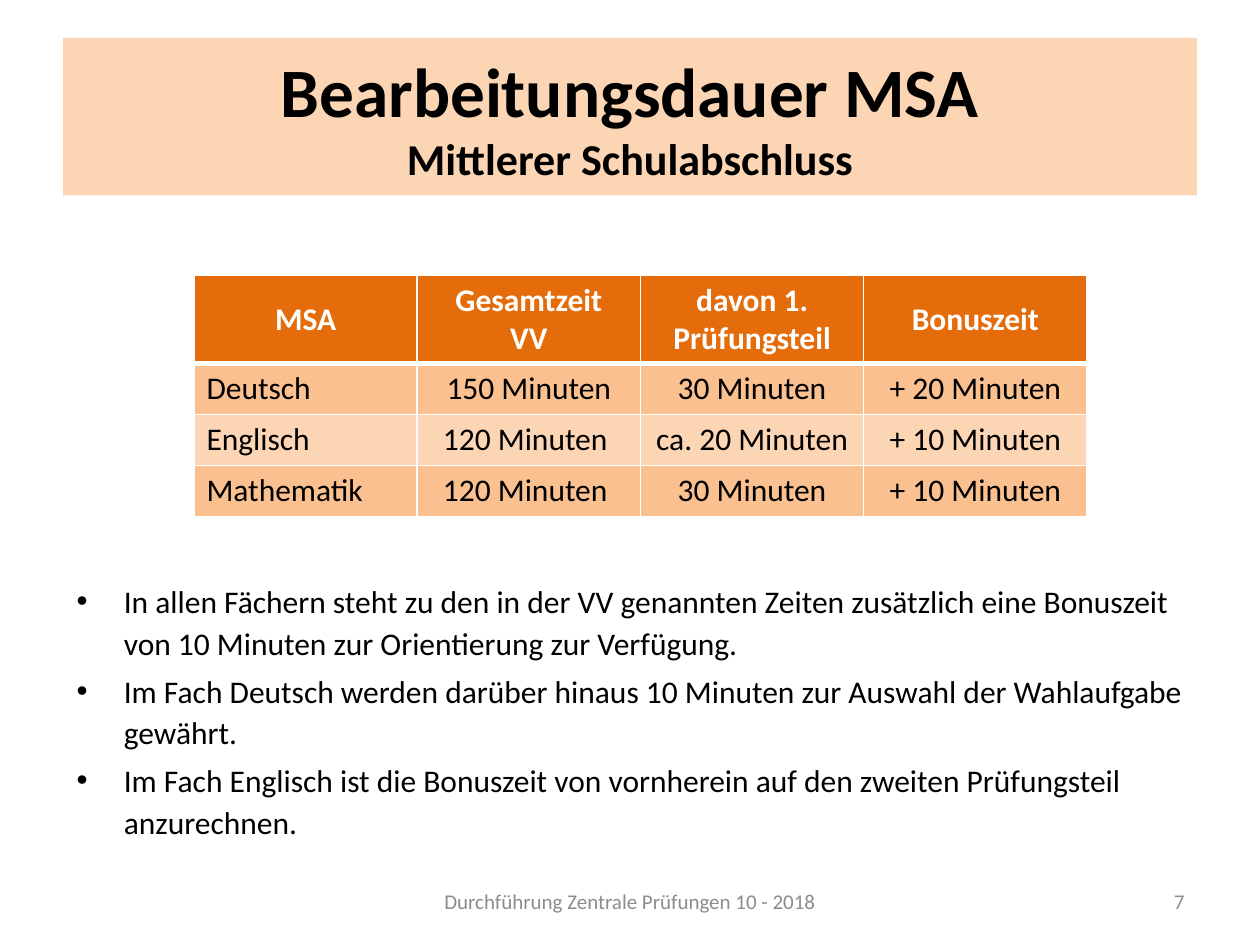
"""Build the slide on working times for the MSA exams."""
from lxml import etree
from pptx import Presentation
from pptx.dml.color import RGBColor
from pptx.enum.text import MSO_ANCHOR as Anchor, MSO_AUTO_SIZE as AutoSize, PP_ALIGN as Align
from pptx.oxml.ns import qn
from pptx.util import Pt

FONT = "Calibri"
COLORS = {"black": "000000", "white": "FFFFFF", "gray": "8C8C8C",
          "header": "E46C0A", "dark": "FAC090", "light": "FCD5B5"}
ROWS = [
    ["MSA", "Gesamtzeit\nVV", "davon 1. Prüfungsteil", "Bonuszeit"],
    ["Deutsch", "150 Minuten", "30 Minuten", "+ 20 Minuten"],
    ["Englisch", "120 Minuten ", "ca. 20 Minuten", "+ 10 Minuten"],
    ["Mathematik", "120 Minuten ", "30 Minuten", "+ 10 Minuten"],
]
NOTES = [
    "In allen Fächern steht zu den in der VV genannten Zeiten zusätzlich eine "
    "Bonuszeit von 10 Minuten zur Orientierung zur Verfügung.",
    "Im Fach Deutsch werden darüber hinaus 10 Minuten zur Auswahl der Wahlaufgabe gewährt.",
    "Im Fach Englisch ist die Bonuszeit von vornherein auf den zweiten Prüfungsteil anzurechnen.",
]


def rgb(name):
    return RGBColor.from_string(COLORS[name])


def format_text(tf, size, color="black", bold=False, align=Align.LEFT):
    for p in tf.paragraphs:
        p.alignment = align
        for r in p.runs:
            r.font.name, r.font.size, r.font.bold = FONT, Pt(size), bold
            r.font.color.rgb = rgb(color)


def add_title(s):
    title = s.shapes.title
    title.left, title.top, title.width, title.height = Pt(36), Pt(21.6), Pt(648), Pt(90)
    title.fill.solid()
    title.fill.fore_color.rgb = rgb("light")
    tf = title.text_frame
    tf.text = "Bearbeitungsdauer MSA\vMittlerer Schulabschluss"
    tf.auto_size = AutoSize.NONE
    tf.vertical_anchor = Anchor.MIDDLE
    format_text(tf, 39.6, bold=True, align=Align.CENTER)
    tf.paragraphs[0].runs[1].font.size = Pt(25.2)


def set_borders(cell, bottom=1, top=1):
    tcPr = cell._tc.get_or_add_tcPr()
    for i, (side, width) in enumerate([("L", 1), ("R", 1), ("T", top), ("B", bottom)]):
        ln = etree.Element(qn(f"a:ln{side}"), w=str(Pt(width)))
        fill = etree.SubElement(ln, qn("a:solidFill"))
        etree.SubElement(fill, qn("a:srgbClr"), val=COLORS["white"])
        tcPr.insert(i, ln)


def add_times_table(s):
    table = s.shapes.add_table(len(ROWS), len(ROWS[0]), Pt(110.8), Pt(157.2),
                               Pt(510.4), Pt(138)).table
    for i, row in enumerate(ROWS):
        header = i == 0
        table.rows[i].height = Pt(50.4 if header else 29.2)
        for j, text in enumerate(row):
            cell = table.cell(i, j)
            cell.fill.solid()
            cell.fill.fore_color.rgb = rgb("header" if header else "dark" if i % 2 else "light")
            set_borders(cell, bottom=3 if header else 1, top=3 if i == 1 else 1)
            cell.text_frame.text = text
            if header:
                cell.vertical_anchor = Anchor.MIDDLE
            format_text(cell.text_frame, 18, "white" if header else "black", header,
                        Align.CENTER if header or j else Align.LEFT)


def add_text(s, text, left, top, width, height):
    tf = s.shapes.add_textbox(Pt(left), Pt(top), Pt(width), Pt(height)).text_frame
    tf.word_wrap = True
    tf.text = text
    return tf


def add_bullets(s, notes):
    tf = add_text(s, "\n".join(notes), 36.7, 327, 648, 152)
    format_text(tf, 18)
    for p in tf.paragraphs:
        p.line_spacing = 1.1
        p.space_before = Pt(3.6)
        pPr = p._p.get_or_add_pPr()
        pPr.set("marL", str(Pt(27)))
        pPr.set("indent", str(Pt(-27)))
        etree.SubElement(pPr, qn("a:buFont"), typeface="Arial")
        etree.SubElement(pPr, qn("a:buChar"), char="•")


def add_footer(s, text, left, width, align):
    tf = add_text(s, text, left, 500.4, width, 28.8)
    tf.vertical_anchor = Anchor.MIDDLE
    format_text(tf, 12, "gray", align=align)


def main():
    prs = Presentation()
    prs.slide_width, prs.slide_height = Pt(720), Pt(540)
    s = prs.slides.add_slide(prs.slide_layouts[5])
    add_title(s)
    add_bullets(s, NOTES)
    add_times_table(s)
    add_footer(s, "Durchführung Zentrale Prüfungen 10 - 2018", 246, 228, Align.CENTER)
    add_footer(s, "7", 516, 168, Align.RIGHT)
    prs.save("out.pptx")


if __name__ == "__main__":
    main()
